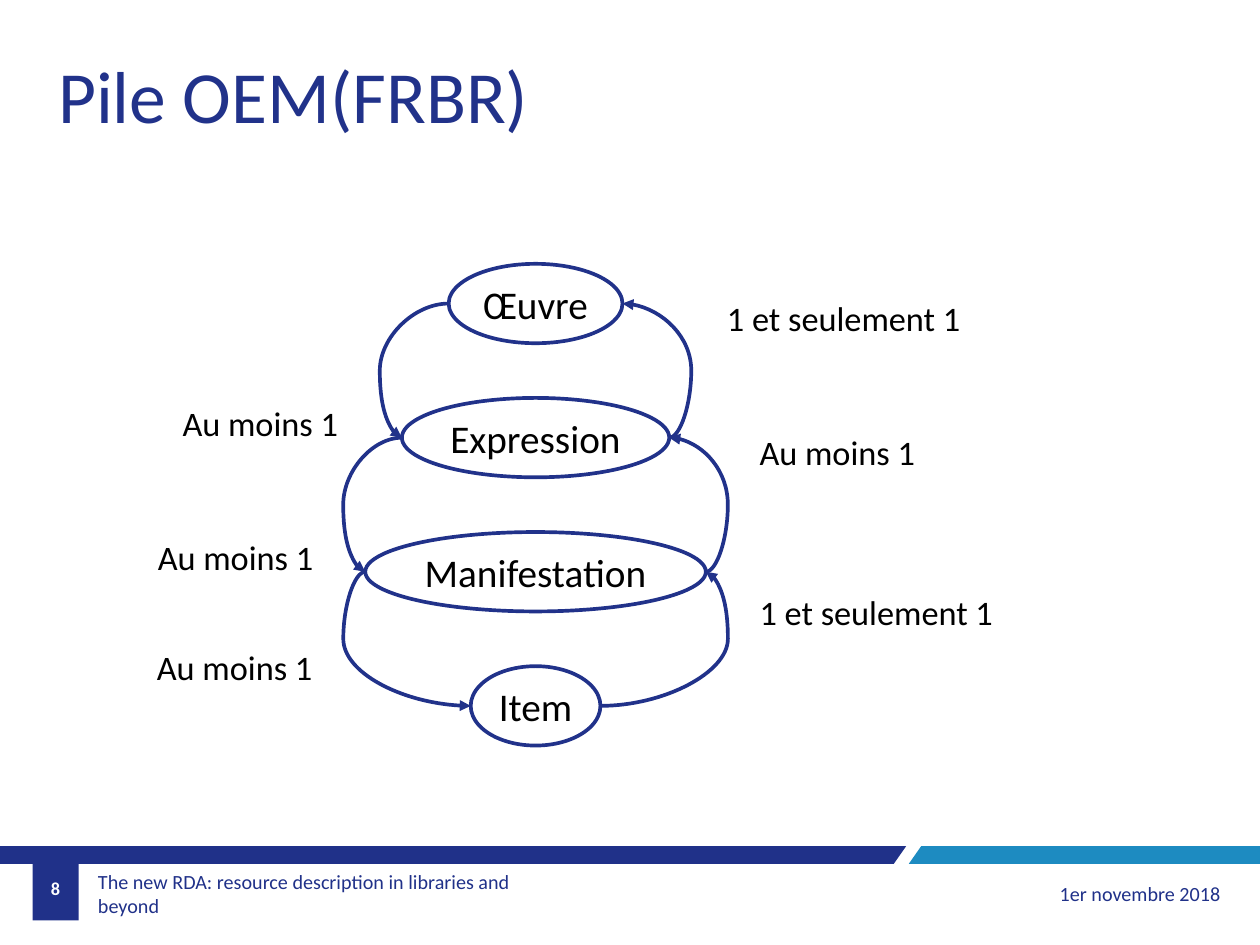
from itertools import pairwise

from lxml import etree
from pptx import Presentation
from pptx import util as u
from pptx.dml.color import RGBColor
from pptx.enum import shapes, text
from pptx.oxml.ns import qn

NAVY, INK, BLUE = "203189", "21328A", "1D8BC1"
WHITE, BLACK = "FFFFFF", "000000"
WIDTH, HEIGHT = 14.28, 10.71


def colour(value):
    return RGBColor.from_string(value)


class Painter:
    font = "Calibri"
    line_width = u.Pt(3)

    def __init__(self, slide):
        self.shapes = slide.shapes

    def set_words(self, shape, words, size, ink, align, anchor, wrap=False, bold=False):
        frame = shape.text_frame
        frame.word_wrap = wrap
        frame.auto_size = text.MSO_AUTO_SIZE.NONE
        frame.vertical_anchor = anchor
        frame.text = words
        para = frame.paragraphs[0]
        para.alignment = align
        font = para.runs[0].font
        font.name, font.size, font.bold = self.font, u.Pt(size), bold
        font.color.rgb = colour(ink)

    def label(self, words, left, top, width, height, size, ink=BLACK,
              align=text.PP_ALIGN.LEFT, anchor=text.MSO_ANCHOR.TOP, wrap=False, bold=False):
        box = self.shapes.add_textbox(*map(u.Inches, (left, top, width, height)))
        self.set_words(box, words, size, ink, align, anchor, wrap, bold)
        return box

    def paint(self, shape, fill):
        shape.shadow.inherit = False
        shape.fill.solid()
        shape.fill.fore_color.rgb = colour(fill)
        shape.line.fill.background()

    def band(self, points, fill):
        start, *rest = [(u.Inches(x), u.Inches(y)) for x, y in points]
        builder = self.shapes.build_freeform(*start)
        builder.add_line_segments(rest, close=True)
        self.paint(builder.convert_to_shape(), fill)

    def badge(self, left, top, width, height, fill):
        box = self.shapes.add_shape(shapes.MSO_SHAPE.RECTANGLE,
                                    *map(u.Inches, (left, top, width, height)))
        self.paint(box, fill)

    def ellipse(self, words, centre_x, centre_y, width, height):
        oval = self.shapes.add_shape(
            shapes.MSO_SHAPE.OVAL,
            *map(u.Inches, (centre_x - width / 2, centre_y - height / 2, width, height)))
        self.paint(oval, WHITE)
        oval.line.color.rgb = colour(INK)
        oval.line.width = self.line_width
        self.set_words(oval, words, 32, BLACK, text.PP_ALIGN.CENTER, text.MSO_ANCHOR.MIDDLE)

    def curved_arrow(self, start, end, bow_x):
        """Draw a curved arrow whose middle stretch runs along x = bow_x."""
        arrow = self.shapes.add_connector(shapes.MSO_CONNECTOR.CURVE,
                                          *map(u.Inches, (*start, *end)))
        arrow.line.color.rgb = colour(INK)
        arrow.line.width = self.line_width
        properties = arrow._element.spPr
        etree.SubElement(properties.find(qn("a:ln")), qn("a:tailEnd"),
                         type="triangle", w="med", len="med")
        etree.SubElement(properties, qn("a:effectLst"))
        ratio = (bow_x - start[0]) / (end[0] - start[0])
        guides = properties.find(qn("a:prstGeom")).find(qn("a:avLst"))
        etree.SubElement(guides, qn("a:gd"), name="adj1", fmla=f"val {round(ratio * 100000)}")


def draw_footer(painter):
    top, bottom = 9.59, 9.79
    middle = text.MSO_ANCHOR.MIDDLE
    painter.band([(0, top), (10.27, top), (10.13, bottom), (0, bottom)], NAVY)
    painter.band([(10.44, top), (WIDTH, top), (WIDTH, bottom), (10.3, bottom)], BLUE)
    painter.badge(0.37, top, 0.52, 0.84, NAVY)
    event = painter.label("The new RDA: resource description in libraries and beyond",
                          1.04, 9.85, 5.52, 0.55, 16.4, NAVY, anchor=middle, wrap=True)
    frame = event.text_frame
    frame.margin_left = frame.margin_right = u.Inches(0.07)
    frame.margin_top = frame.margin_bottom = u.Inches(0.04)
    painter.label("1er novembre 2018", 10.27, 9.85, 3.66, 0.55, 16.4, NAVY,
                  text.PP_ALIGN.RIGHT, middle, wrap=True)
    painter.label("8", 0.37, 9.79, 0.52, 0.55, 14.9, WHITE,
                  text.PP_ALIGN.CENTER, middle, wrap=True, bold=True)


def draw_stack(painter):
    centre_x, first_y, step, bow = 6.07, 3.44, 1.52, 0.25
    entities = [("Œuvre", 1.97), ("Expression", 3.03), ("Manifestation", 3.86), ("Item", 1.47)]
    levels = [(name, width, first_y + row * step) for row, (name, width) in enumerate(entities)]
    for name, width, y in levels:
        painter.ellipse(name, centre_x, y, width, 0.9)
    for (_, upper_width, upper_y), (_, lower_width, lower_y) in pairwise(levels):
        reach = max(upper_width, lower_width) / 2 + bow
        painter.curved_arrow((centre_x - upper_width / 2, upper_y),
                             (centre_x - lower_width / 2, lower_y), centre_x - reach)
        painter.curved_arrow((centre_x + lower_width / 2, lower_y),
                             (centre_x + upper_width / 2, upper_y), centre_x + reach)


def draw_cardinalities(painter):
    exactly_one, at_least_one = ("1 et seulement 1", 2.88), ("Au moins 1", 1.99)
    for (words, width), left, top in [
        (exactly_one, 8.14, 3.32),
        (at_least_one, 8.51, 4.84),
        (exactly_one, 8.51, 6.65),
        (at_least_one, 1.97, 4.51),
        (at_least_one, 1.69, 6.03),
        (at_least_one, 1.68, 7.27),
    ]:
        painter.label(words, left, top, width, 0.57, 28)


def main():
    deck = Presentation()
    deck.slide_width, deck.slide_height = u.Inches(WIDTH), u.Inches(HEIGHT)
    painter = Painter(deck.slides.add_slide(deck.slide_layouts[6]))
    draw_footer(painter)
    painter.label("Pile OEM(FRBR)", 0.56, 0.52, 5.59, 1.11, 60, INK)
    draw_stack(painter)
    draw_cardinalities(painter)
    deck.save("out.pptx")


if __name__ == "__main__":
    main()
